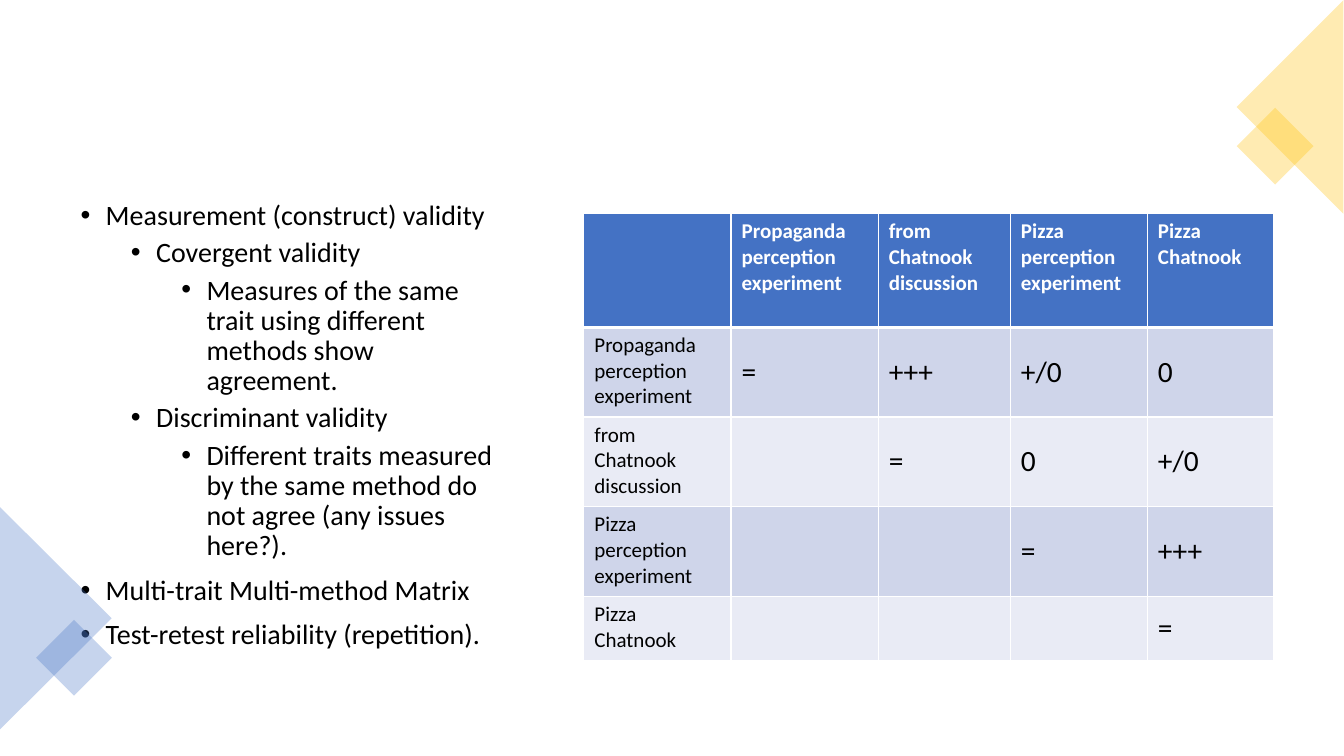
from pptx import Presentation
from pptx.dml.color import RGBColor
from pptx.enum.shapes import MSO_SHAPE
from pptx.enum.text import MSO_ANCHOR
from pptx.oxml import parse_xml
from pptx.oxml.ns import nsdecls, qn
from pptx.util import Cm, Pt
from lxml.etree import SubElement

BLUE, GOLD, WHITE, BLACK = "4472C4", "FFC000", "FFFFFF", "000000"
BANDS = ("CFD5EA", "E9EBF5")


def color(value):
    return RGBColor.from_string(value)


class SlideBuilder:
    font = "Calibri"

    def __init__(self, slide):
        self.slide = slide

    def run(self, paragraph, text, size, ink=BLACK, bold=False):
        run = paragraph.add_run()
        run.text = text
        run.font.name = self.font
        run.font.size = Pt(size)
        run.font.bold = bold
        run.font.color.rgb = color(ink)

    def bullets(self, left, top, width, height, items, size):
        box = self.slide.shapes.add_textbox(Cm(left), Cm(top), Cm(width), Cm(height))
        frame = box.text_frame
        frame.word_wrap = True
        for index, (level, text) in enumerate(items):
            paragraph = frame.add_paragraph() if index else frame.paragraphs[0]
            paragraph.level = level
            paragraph.line_spacing = 0.9
            paragraph.space_before = Pt(5 if level else 10)
            properties = paragraph._p.get_or_add_pPr()
            properties.set("marL", str(Cm(0.635 + 1.27 * level)))
            properties.set("indent", str(-Cm(0.635)))
            SubElement(properties, qn("a:buFont")).set("typeface", "Arial")
            SubElement(properties, qn("a:buChar")).set("char", "•")
            self.run(paragraph, text, size)

    def ornament(self, kind, left, top, width, height, rotation, fill):
        shape = self.slide.shapes.add_shape(kind, Cm(left), Cm(top), Cm(width), Cm(height))
        shape.rotation = rotation
        shape.shadow.inherit = False
        shape.line.fill.background()
        shape.fill.solid()
        shape.fill.fore_color.rgb = color(fill)
        fill_color = shape.fill._xPr.find(qn("a:solidFill"))[0]
        SubElement(fill_color, qn("a:alpha")).set("val", "30000")

    def borders(self, cell, bottom):
        properties = cell._tc.get_or_add_tcPr()
        widths = {"lnL": 1, "lnR": 1, "lnT": 1, "lnB": bottom}
        for index, (side, width) in enumerate(widths.items()):
            properties.insert(index, parse_xml(
                f'<a:{side} {nsdecls("a")} w="{Pt(width)}"><a:solidFill>'
                f'<a:srgbClr val="{WHITE}"/></a:solidFill></a:{side}>'))

    def matrix(self, left, top, columns, heights, rows):
        table = self.slide.shapes.add_table(
            len(heights), len(columns), Cm(left), Cm(top),
            Cm(sum(columns)), Cm(sum(heights))).table
        for column, width in zip(table.columns, columns):
            column.width = Cm(width)
        for row, height in zip(table.rows, heights):
            row.height = Cm(height)
        for i, texts in enumerate(rows):
            for j, text in enumerate(texts):
                self.matrix_cell(table.cell(i, j), text, i, j)

    def matrix_cell(self, cell, text, i, j):
        header, value = i == 0, i > 0 and j > 0
        cell.margin_left = cell.margin_right = Cm(0.27)
        cell.margin_top = cell.margin_bottom = Cm(0.13)
        cell.vertical_anchor = MSO_ANCHOR.MIDDLE if value else MSO_ANCHOR.TOP
        cell.fill.solid()
        cell.fill.fore_color.rgb = color(BLUE if header else BANDS[(i - 1) % 2])
        self.borders(cell, 3 if header else 1)
        if text:
            self.run(cell.text_frame.paragraphs[0], text, 21 if value else 15,
                     WHITE if header else BLACK, header)


def main():
    presentation = Presentation()
    presentation.slide_width, presentation.slide_height = Cm(33.87), Cm(19.05)
    builder = SlideBuilder(presentation.slides.add_slide(presentation.slide_layouts[6]))

    # Validity outline
    builder.bullets(1.78, 4.95, 11.13, 12.22, [
        (0, "Measurement (construct) validity"),
        (1, "Covergent validity"),
        (2, "Measures of the same trait using different methods show agreement."),
        (1, "Discriminant validity"),
        (2, "Different traits measured by the same method do not agree (any issues here?)."),
        (0, "Multi-trait Multi-method Matrix"),
        (0, "Test-retest reliability (repetition)."),
    ], 20)

    # Corner ornaments
    triangle, square = MSO_SHAPE.ISOSCELES_TRIANGLE, MSO_SHAPE.RECTANGLE
    builder.ornament(triangle, -1.4, 14.17, 5.61, 2.82, 90, BLUE)
    builder.ornament(square, 1.19, 15.9, 1.35, 1.35, 45, BLUE)
    builder.ornament(square, 31.45, 3, 1.37, 1.37, 45, GOLD)
    builder.ornament(triangle, 29.82, 1.35, 5.38, 2.69, 270, GOLD)

    # Multi-trait multi-method matrix: the same measures head rows and columns
    measures = ["Propaganda perception experiment", "from Chatnook discussion",
                "Pizza perception experiment", "Pizza Chatnook"]
    agreement = [["=", "+++", "+/0", "0"],
                 ["", "=", "0", "+/0"],
                 ["", "", "=", "+++"],
                 ["", "", "", "="]]
    rows = [["", *measures]]
    rows += [[measure, *values] for measure, values in zip(measures, agreement)]
    builder.matrix(14.71, 5.38, [3.71, 3.71, 3.33, 3.45, 3.18],
                   [2.87, 2.26, 2.26, 2.26, 1.63], rows)

    presentation.save("out.pptx")


if __name__ == "__main__":
    main()
